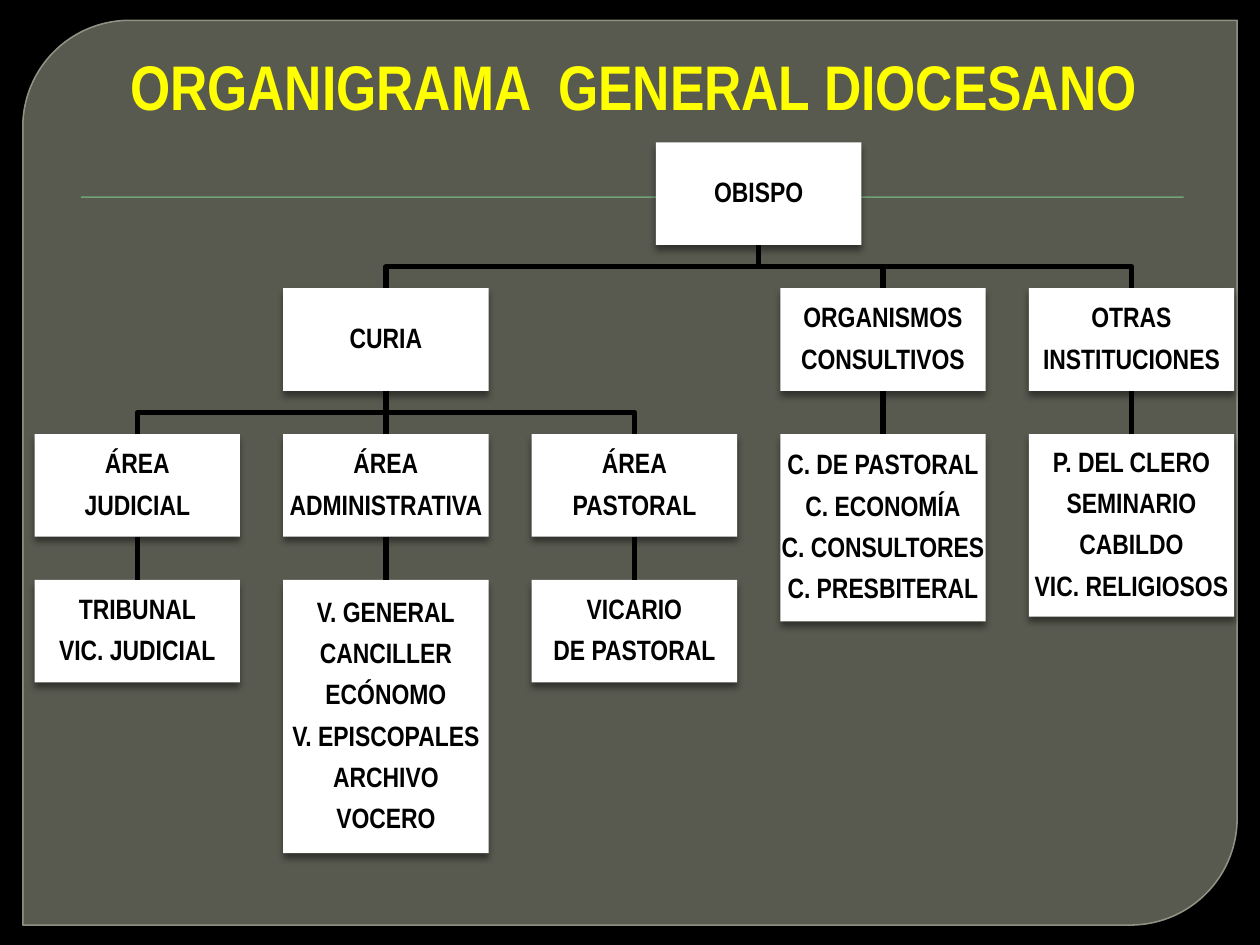
from dataclasses import dataclass, field

import pptx
import pptx.dml.color
import pptx.enum.shapes
import pptx.enum.text
import pptx.oxml
import pptx.oxml.ns
import pptx.util
from pptx.util import Cm

BLACK = pptx.dml.color.RGBColor(0x00, 0x00, 0x00)
WHITE = pptx.dml.color.RGBColor(0xFF, 0xFF, 0xFF)
YELLOW = pptx.dml.color.RGBColor(0xFF, 0xFF, 0x00)
PANEL = pptx.dml.color.RGBColor(0x88, 0x8B, 0x7B)
PANEL_EDGE = pptx.dml.color.RGBColor(0x9D, 0xA0, 0x90)
GREEN = pptx.dml.color.RGBColor(0x72, 0xA3, 0x76)
FONT = "Arial Narrow"

BOX_WIDTH, BOX_HEIGHT = Cm(4.14), Cm(2.07)
COLUMN_STEP, ROW_STEP = Cm(5.01), Cm(2.94)


@dataclass
class Unit:
    text: str
    column: float  # in column steps from the left of the chart
    children: list = field(default_factory=list)
    height: int = BOX_HEIGHT


DIOCESE = Unit("OBISPO", 2.5, [
    Unit("CURIA", 1, [
        Unit("ÁREA\nJUDICIAL", 0, [Unit("TRIBUNAL\nVIC. JUDICIAL", 0)]),
        Unit("ÁREA\nADMINISTRATIVA", 1, [
            Unit("V. GENERAL\nCANCILLER\nECÓNOMO\nV. EPISCOPALES\nARCHIVO\nVOCERO",
                 1, height=Cm(5.51))]),
        Unit("ÁREA\nPASTORAL", 2, [Unit("VICARIO\nDE PASTORAL", 2)]),
    ]),
    Unit("ORGANISMOS\nCONSULTIVOS", 3, [
        Unit("C. DE PASTORAL\nC. ECONOMÍA\nC. CONSULTORES\nC. PRESBITERAL",
             3, height=Cm(3.78))]),
    Unit("OTRAS\nINSTITUCIONES", 4, [
        Unit("P. DEL CLERO\nSEMINARIO\nCABILDO\nVIC. RELIGIOSOS",
             4, height=Cm(3.68))]),
])


def set_alpha(color_parent, percent):
    """Make the solid fill found under an element partly transparent."""
    color = color_parent.find(pptx.oxml.ns.qn("a:solidFill"))[0]
    color.append(pptx.oxml.parse_xml(
        f'<a:alpha {pptx.oxml.ns.nsdecls("a")} val="{percent * 1000}"/>'))


def add_shadow(shape):
    effects = shape.element.spPr.find(pptx.oxml.ns.qn("a:effectLst"))
    effects.append(pptx.oxml.parse_xml(
        f'<a:outerShdw {pptx.oxml.ns.nsdecls("a")} blurRad="50800" dist="38100" '
        'dir="5400000" rotWithShape="0"><a:srgbClr val="000000">'
        '<a:alpha val="43000"/></a:srgbClr></a:outerShdw>'))


def add_filled_shape(slide, kind, left, top, width, height, color):
    shape = slide.shapes.add_shape(kind, left, top, width, height)
    shape.shadow.inherit = False
    shape.fill.solid()
    shape.fill.fore_color.rgb = color
    shape.line.fill.background()
    return shape


def format_runs(paragraph, size, color):
    for run in paragraph.runs:
        run.font.name = FONT
        run.font.size = pptx.util.Pt(size)
        run.font.bold = True
        run.font.color.rgb = color


def add_frame(slide, left, top, width, height):
    """Panel with two rounded corners and a thin rule across it."""
    shapes = pptx.enum.shapes.MSO_SHAPE
    panel = add_filled_shape(slide, shapes.ROUND_2_DIAG_RECTANGLE,
                             left, top, width, height, PANEL)
    panel.adjustments[0] = 0.118
    panel.adjustments[1] = 0
    set_alpha(panel.element.spPr, 65)
    panel.line.color.rgb = PANEL_EDGE
    panel.line.width = pptx.util.Pt(0.87)
    set_alpha(panel.line._get_or_add_ln(), 88)
    add_filled_shape(slide, shapes.RECTANGLE, left + Cm(1.17), top + Cm(3.55),
                     Cm(22.23), Cm(0.03), GREEN)


def add_title(slide, left, top, width, height):
    title = slide.shapes.title
    title.left, title.top, title.width, title.height = left, top, width, height
    title.text_frame.text = "ORGANIGRAMA  GENERAL DIOCESANO"
    title.text_frame.vertical_anchor = pptx.enum.text.MSO_ANCHOR.MIDDLE
    paragraph = title.text_frame.paragraphs[0]
    paragraph.alignment = pptx.enum.text.PP_ALIGN.CENTER
    paragraph._p.get_or_add_pPr().set("marL", str(Cm(0.15)))
    format_runs(paragraph, 36, YELLOW)
    # Bring the title in front of the panel
    title.element.getparent().append(title.element)


def add_box(slide, unit, left, top):
    box = add_filled_shape(slide, pptx.enum.shapes.MSO_SHAPE.RECTANGLE,
                           left, top, BOX_WIDTH, unit.height, WHITE)
    add_shadow(box)
    frame = box.text_frame
    frame.text = unit.text
    frame.word_wrap = False
    frame.vertical_anchor = pptx.enum.text.MSO_ANCHOR.MIDDLE
    frame.margin_left = frame.margin_right = Cm(0.03)
    frame.margin_top = frame.margin_bottom = Cm(0.03)
    for paragraph in frame.paragraphs:
        paragraph.alignment = pptx.enum.text.PP_ALIGN.CENTER
        paragraph.line_spacing = 0.9
        paragraph.space_after = pptx.util.Pt(6.3)
        format_runs(paragraph, 16, BLACK)
    return box


def link_boxes(slide, parent, child):
    """Straight connector within a column, bent line between columns."""
    start_x, end_x = (box.left + box.width // 2 for box in (parent, child))
    start_y, end_y = parent.top + parent.height, child.top
    if start_x == end_x:
        link = slide.shapes.add_connector(
            pptx.enum.shapes.MSO_CONNECTOR.STRAIGHT, start_x, start_y, end_x, end_y)
        link.begin_connect(parent, 2)
        link.end_connect(child, 0)
        link.element.spPr.append(pptx.oxml.parse_xml(
            f'<a:effectLst {pptx.oxml.ns.nsdecls("a")}/>'))
    else:
        middle_y = (start_y + end_y) // 2
        builder = slide.shapes.build_freeform(start_x, start_y)
        builder.add_line_segments(
            [(start_x, middle_y), (end_x, middle_y), (end_x, end_y)], close=False)
        link = builder.convert_to_shape()
        link.shadow.inherit = False
        link.fill.background()
    link.line.color.rgb = BLACK
    link.line.width = pptx.util.Pt(3)


def add_branch(slide, unit, left, top):
    """Place a unit and all units below it; left is the left of the chart."""
    box = add_box(slide, unit, left + int(unit.column * COLUMN_STEP), top)
    for child in unit.children:
        link_boxes(slide, box, add_branch(slide, child, left, top + ROW_STEP))
    return box


def main():
    presentation = pptx.Presentation()
    presentation.slide_width, presentation.slide_height = Cm(25.4), Cm(19.05)
    slide = presentation.slides.add_slide(presentation.slide_layouts[5])
    slide.background.fill.solid()
    slide.background.fill.fore_color.rgb = BLACK

    add_frame(slide, Cm(0.46), Cm(0.41), Cm(24.48), Cm(18.24))
    add_title(slide, Cm(1.27), Cm(0.71), Cm(22.86), Cm(2.03))
    add_branch(slide, DIOCESE, Cm(0.7), Cm(2.87))
    presentation.save("out.pptx")


if __name__ == "__main__":
    main()
